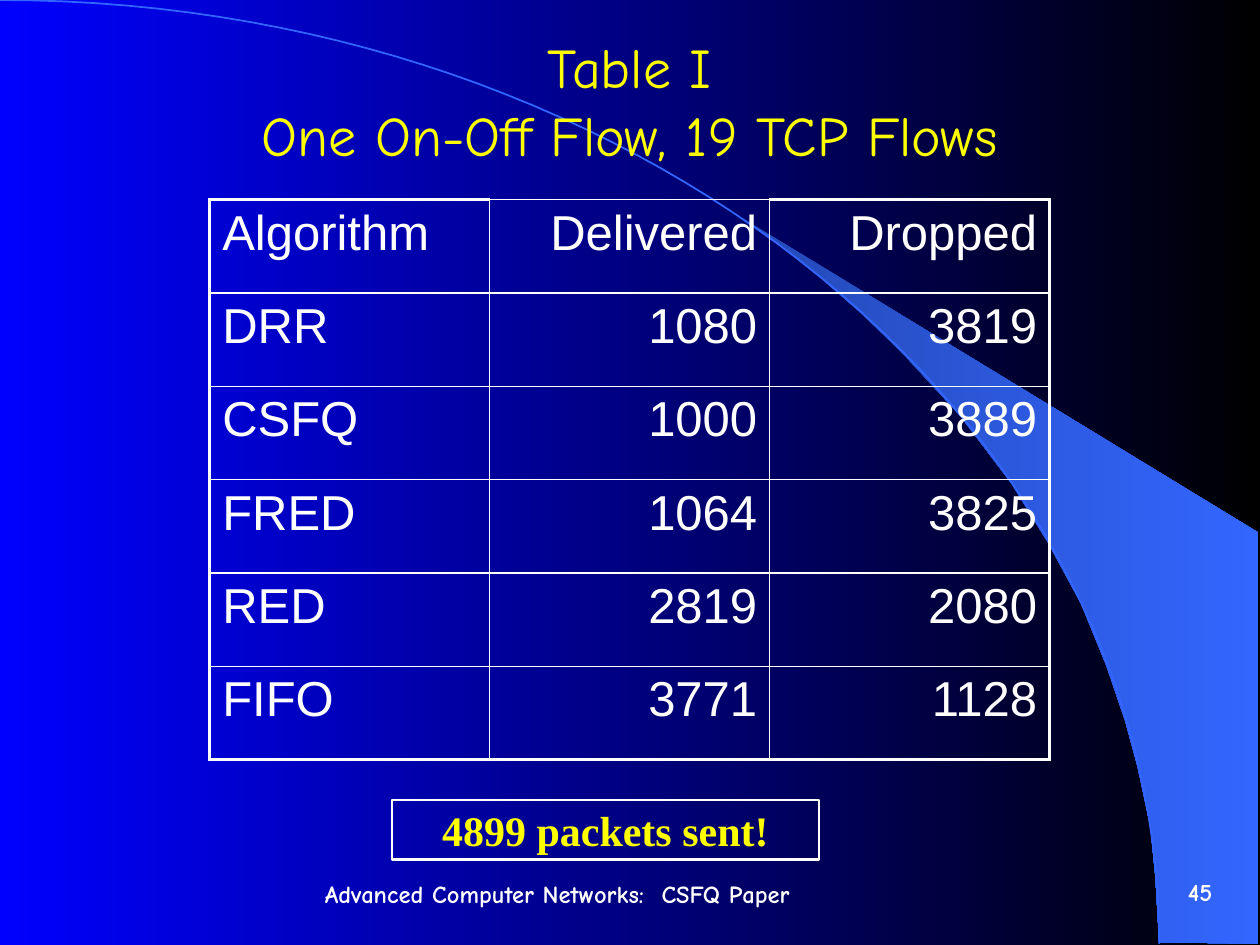
from lxml import etree
from pptx import Presentation
from pptx.dml.color import RGBColor
from pptx.enum.shapes import MSO_SHAPE
from pptx.enum.text import MSO_ANCHOR, PP_ALIGN
from pptx.oxml.ns import qn
from pptx.util import Inches, Pt

LEFT, CENTER, RIGHT = PP_ALIGN.LEFT, PP_ALIGN.CENTER, PP_ALIGN.RIGHT
MIDDLE = MSO_ANCHOR.MIDDLE
RECTANGLE = MSO_SHAPE.RECTANGLE

# Grid of half-inch units
COLUMNS, ROWS = 20, 15
WIDTH, HEIGHT = Inches(10), Inches(7.5)

WHITE, YELLOW, BLUE, BLACK = "FFFFFF", "FFFF00", "0000FF", "000000"
SKY, DUSK = "3366FF", "2449B6"
COMIC, SANS, SERIF = "Comic Neue", "Arial", "Times New Roman"
THIN, THICK = 1, 2.25


def color(code):
    return RGBColor.from_string(code)


def across(columns):
    return round(WIDTH * columns / COLUMNS)


def down(rows):
    return round(HEIGHT * rows / ROWS)


def bezier(start, first, second, end, steps=60):
    """Points along a cubic curve."""
    points = []
    for step in range(steps + 1):
        t = step / steps
        u = 1 - t
        weights = (u**3, 3 * u * u * t, 3 * u * t * t, t**3)
        corners = (start, first, second, end)
        points.append(tuple(
            sum(w * corner[axis] for w, corner in zip(weights, corners))
            for axis in (0, 1)))
    return points


class SlideBuilder:
    def __init__(self, deck):
        self.page = deck.slides.add_slide(deck.slide_layouts[6])

    def gradient(self, fill, start, end):
        fill.gradient()
        fill.gradient_angle = 0
        for stop, code, position in zip(fill.gradient_stops, (start, end), (0, 1)):
            stop.color.rgb = color(code)
            stop.position = position

    def background(self, start, end):
        self.gradient(self.page.background.fill, start, end)

    def outline(self, points, close):
        spots = [(across(x), down(y)) for x, y in points]
        builder = self.page.shapes.build_freeform(*spots[0], scale=1.0)
        builder.add_line_segments(spots[1:], close=close)
        shape = builder.convert_to_shape()
        shape.shadow.inherit = False
        return shape

    def area(self, points, start, end):
        shape = self.outline(points, True)
        self.gradient(shape.fill, start, end)
        shape.line.fill.background()

    def curve(self, points, code, width):
        shape = self.outline(points, False)
        shape.fill.background()
        self.stroke(shape, code, width)

    def stroke(self, shape, code, width):
        shape.line.color.rgb = color(code)
        shape.line.width = Pt(width)

    def add_lines(self, frame, lines, size, font, code, align=LEFT, bold=False):
        para = frame.paragraphs[0]
        para.alignment = align
        for index, line in enumerate(lines):
            if index:
                para.add_line_break()
            span = para.add_run()
            span.text = line
            span.font.size = Pt(size)
            span.font.name = font
            span.font.bold = bold
            span.font.color.rgb = color(code)

    def text(self, x, y, w, h, lines, *style, **options):
        box = self.page.shapes.add_textbox(across(x), down(y), across(w), down(h))
        frame = box.text_frame
        frame.word_wrap = True
        frame.vertical_anchor = MIDDLE
        self.add_lines(frame, lines, *style, **options)

    def framed_text(self, x, y, w, h, lines, *style, **options):
        box = self.page.shapes.add_shape(
            RECTANGLE, across(x), down(y), across(w), down(h))
        box.shadow.inherit = False
        box.fill.background()
        self.stroke(box, WHITE, 1.5)
        frame = box.text_frame
        frame.word_wrap = False
        frame.vertical_anchor = MIDDLE
        self.add_lines(frame, lines, *style, **options)

    def border(self, cell, side, width):
        line = etree.SubElement(
            cell._tc.get_or_add_tcPr(), qn("a:ln" + side), w=str(Pt(width)))
        fill = etree.SubElement(line, qn("a:solidFill"))
        etree.SubElement(fill, qn("a:srgbClr"), val=WHITE)

    def table(self, x, y, w, h, records):
        last_row, last_column = len(records) - 1, len(records[0]) - 1
        grid = self.page.shapes.add_table(
            last_row + 1, last_column + 1,
            across(x), down(y), across(w), down(h)).table
        grid.first_row = grid.horz_banding = False
        for r, record in enumerate(records):
            for c, value in enumerate(record):
                cell = grid.cell(r, c)
                # The outer frame is thick, except above the middle heading
                thick = {"L": c == 0, "R": c == last_column,
                         "T": r == 0 and c in (0, last_column),
                         "B": r == last_row}
                for side, heavy in thick.items():
                    self.border(cell, side, THICK if heavy else THIN)
                cell.fill.background()
                self.add_lines(cell.text_frame, [str(value)], 28, SANS, WHITE,
                               RIGHT if c else LEFT)


def main():
    deck = Presentation()
    deck.slide_width, deck.slide_height = WIDTH, HEIGHT
    slide = SlideBuilder(deck)

    # Backdrop: gradient, light beam and arc
    slide.background(BLUE, BLACK)
    beam = [(18.4, 14.96), (19.98, 14.98), (19.98, 8.46), (11.78, 3.46),
            (12.48, 3.98), (13.06, 4.44), (13.7, 5), (14.32, 5.6),
            (15.24, 6.6), (16.06, 7.68), (16.64, 8.62), (17.16, 9.58),
            (17.56, 10.56), (17.86, 11.44), (18.06, 12.18), (18.26, 13.12),
            (18.34, 13.92)]
    slide.area(beam, DUSK, SKY)
    slide.curve(bezier((0, 0), (10.16, 0), (18.4, 6.7), (18.4, 14.98)), SKY, 1)

    # Footer and page number
    slide.text(4.96, 13.8, 9.76, 0.78, ["Advanced Computer Networks:  CSFQ Paper"],
               14, COMIC, WHITE, bold=True)
    slide.text(16.46, 13.64, 2.98, 1.02, ["45"], 14, COMIC, WHITE, RIGHT, bold=True)

    # Title
    slide.text(1.5, 0.34, 17, 2.5, ["Table I", "One On-Off Flow, 19 TCP Flows"],
               32, COMIC, YELLOW, CENTER)

    # Packets by algorithm
    slide.table(3.33, 3.17, 13.33, 8.89, [
        ("Algorithm", "Delivered", "Dropped"),
        ("DRR", 1080, 3819),
        ("CSFQ", 1000, 3889),
        ("FRED", 1064, 3825),
        ("RED", 2819, 2080),
        ("FIFO", 3771, 1128),
    ])

    # Total
    slide.framed_text(6.22, 12.7, 6.78, 0.94, ["4899 packets sent!"],
                      24, SERIF, YELLOW, CENTER, bold=True)

    deck.save("out.pptx")


if __name__ == "__main__":
    main()
